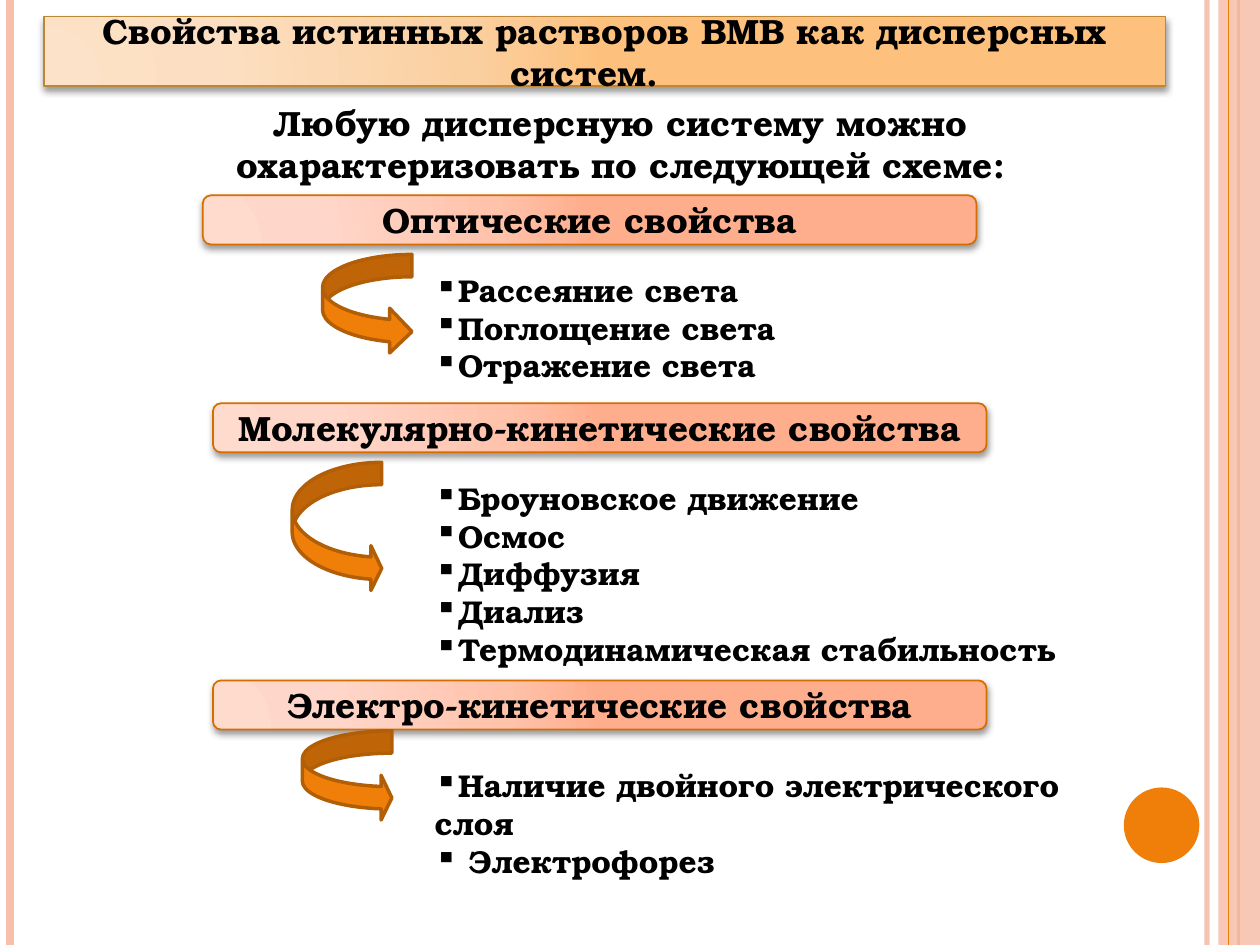
"""Build the slide on the properties of polymer solutions as disperse systems."""
from pptx import Presentation, oxml
from pptx import util as u
from pptx.dml.color import RGBColor
from pptx.enum import shapes, text
from pptx.oxml import ns

FONT = "TeX Gyre Bonum"
BLACK = RGBColor(0x00, 0x00, 0x00)
PEACH = RGBColor(0xF6, 0xC0, 0xAB)
ORANGE = RGBColor(0xF0, 0x7F, 0x09)
DARK_ORANGE = RGBColor(0xB2, 0x5E, 0x07)
TITLE_LINE = RGBColor(0xBC, 0x87, 0x36)
HEADER_LINE = RGBColor(0xD5, 0x6D, 0x00)
TITLE_STOPS = [RGBColor.from_string(c) for c in ("FCE2C8", "FCDFC2", "FBD0A1", "FDC17D")]
HEADER_STOPS = [RGBColor.from_string(c) for c in ("FFDBCE", "FFD7CA", "FFC3AC", "FFAE8D")]
STOP_PLACES = (0, 30, 75, 100)
SHAPE = shapes.MSO_SHAPE

TITLE = "Свойства истинных растворов ВМВ как дисперсных систем.\t"
INTRO = "Любую дисперсную систему можно охарактеризовать по следующей схеме:"
SECTIONS = [
    ("Оптические свойства", (115.9, 111.6), (241.2, 151.2, 272.2, 72.7),
     ["Рассеяние света", "Поглощение света", "Отражение света"],
     (184.3, 145.4, 51.1, 56.9), 0.25),
    ("Молекулярно-кинетические свойства", (121.7, 230.4), (241.2, 270, 385.2, 116.6),
     ["Броуновское движение", "Осмос", "Диффузия", "Диализ",
      "Термодинамическая стабильность"],
     (167, 264.2, 51.1, 73.4), 0.12),
    ("Электро-кинетические свойства", (121.7, 388.8), (241.2, 434.2, 385.2, 51.1),
     ["Наличие двойного электрического слоя", " Электрофорез"],
     (172.8, 417.6, 51.1, 51.1), 0.12),
]


def points(box):
    """Convert a sequence of numbers to point lengths."""
    return [u.Pt(v) for v in box]


def xml(body):
    """Return an element made from markup in the drawing namespace."""
    tag, rest = body[:-1].split(" ", 1) if " " in body.split(">")[0] else (None, None)
    if tag is None:
        tag, rest = body[:-1].split(">", 1)
        rest = ">" + rest
    return oxml.parse_xml(f"{tag} {ns.nsdecls('a')} {rest}>")


def set_alpha(fill, percent):
    """Make a solid fill partly transparent."""
    color = fill._xPr.find(".//" + ns.qn("a:srgbClr"))
    color.append(xml(f'<a:alpha val="{percent * 1000}"/>'))


def add_rule(s, x, color, width, alpha=None):
    """Draw a vertical line over the full slide height."""
    line = s.shapes.add_connector(shapes.MSO_CONNECTOR.STRAIGHT, *points((x, 0, x, 540)))
    line.line.color.rgb = color
    line.line.width = u.Pt(width)
    if alpha:
        set_alpha(line.line.fill, alpha)
    line._element.spPr.append(oxml.parse_xml(f"<a:effectLst {ns.nsdecls('a')}/>"))


def add_solid(s, kind, box, color, line=None, width=0):
    """Add a plain filled shape."""
    sp = s.shapes.add_shape(kind, *points(box))
    sp.shadow.inherit = False
    sp.fill.solid()
    sp.fill.fore_color.rgb = color
    if line is None:
        sp.line.fill.background()
    else:
        sp.line.color.rgb = line
        sp.line.width = u.Pt(width)
    return sp


def style_paragraph(p, size, align=text.PP_ALIGN.LEFT):
    """Apply the bold slide font and the alignment to a paragraph."""
    p.alignment = align
    for r in p.runs:
        r.font.name = FONT
        r.font.size = u.Pt(size)
        r.font.bold = True
        r.font.color.rgb = BLACK


def add_banner(s, kind, box, caption, stops, line):
    """Add a shadowed heading shape with a radial gradient."""
    sp = add_solid(s, kind, box, stops[0], line, 1)
    marks = "".join(f'<a:gs pos="{place * 1000}"><a:srgbClr val="{color}"/></a:gs>'
                    for place, color in zip(STOP_PLACES, stops))
    gradient = xml(f'<a:gradFill rotWithShape="1"><a:gsLst>{marks}</a:gsLst>'
                   '<a:path path="circle"><a:fillToRect l="5000" t="100000" '
                   'r="120000" b="10000"/></a:path></a:gradFill>')
    sp_pr = sp._element.spPr
    sp_pr.replace(sp_pr.find(ns.qn("a:solidFill")), gradient)
    sp_pr.find(ns.qn("a:effectLst")).append(xml(
        '<a:outerShdw blurRad="50800" dist="25400" dir="5400000" rotWithShape="0">'
        '<a:srgbClr val="000000"><a:alpha val="40000"/></a:srgbClr></a:outerShdw>'))
    tf = sp.text_frame
    tf.text = caption
    tf.word_wrap = True
    tf.vertical_anchor = text.MSO_ANCHOR.MIDDLE
    style_paragraph(tf.paragraphs[0], 20, text.PP_ALIGN.CENTER)


def add_text(s, box, lines, size, align=text.PP_ALIGN.LEFT, bullet=None):
    """Add a wrapping text box, with bullets if asked."""
    tf = s.shapes.add_textbox(*points(box)).text_frame
    tf.word_wrap = True
    tf.auto_size = text.MSO_AUTO_SIZE.SHAPE_TO_FIT_TEXT
    tf.text = "\n".join(lines)
    for p in tf.paragraphs:
        style_paragraph(p, size, align)
        if bullet:
            p._p.get_or_add_pPr().append(xml(f'<a:buChar char="{bullet}"/>'))


def add_arrow(s, box, head):
    """Add a curved arrow with the given head length."""
    sp = add_solid(s, SHAPE.CURVED_RIGHT_ARROW, box, ORANGE, DARK_ORANGE, 2)
    sp.adjustments[2] = head


def add_decor(s):
    """Add the edge stripes and the corner disc."""
    add_rule(s, 689.8, PEACH, 3, 93)
    add_rule(s, 5.8, PEACH, 4.5)
    add_rule(s, 707.8, ORANGE, 1.5)
    band = add_solid(s, SHAPE.RECTANGLE, (696.2, 0, 23.8, 540), PEACH)
    set_alpha(band.fill, 87)
    add_rule(s, 702, ORANGE, 0.75)
    add_solid(s, SHAPE.OVAL, (642.2, 450, 43.2, 43.2), ORANGE)


def main():
    """Build and save the slide."""
    prs = Presentation()
    prs.slide_width, prs.slide_height = points((720, 540))
    s = prs.slides.add_slide(prs.slide_layouts[6])
    add_decor(s)
    add_banner(s, SHAPE.RECTANGLE, (25.2, 9.4, 640.8, 39.6), TITLE, TITLE_STOPS, TITLE_LINE)
    for caption, corner, list_box, items, arrow_box, head in SECTIONS:
        add_banner(s, SHAPE.ROUNDED_RECTANGLE, (*corner, 442.1, 28.1), caption,
                   HEADER_STOPS, HEADER_LINE)
        add_text(s, list_box, items, 18, bullet="▪")
        add_arrow(s, arrow_box, head)
    add_text(s, (65.5, 54.7, 578.2, 55.4), [INTRO], 20, text.PP_ALIGN.CENTER)
    prs.save("out.pptx")


if __name__ == "__main__":
    main()
